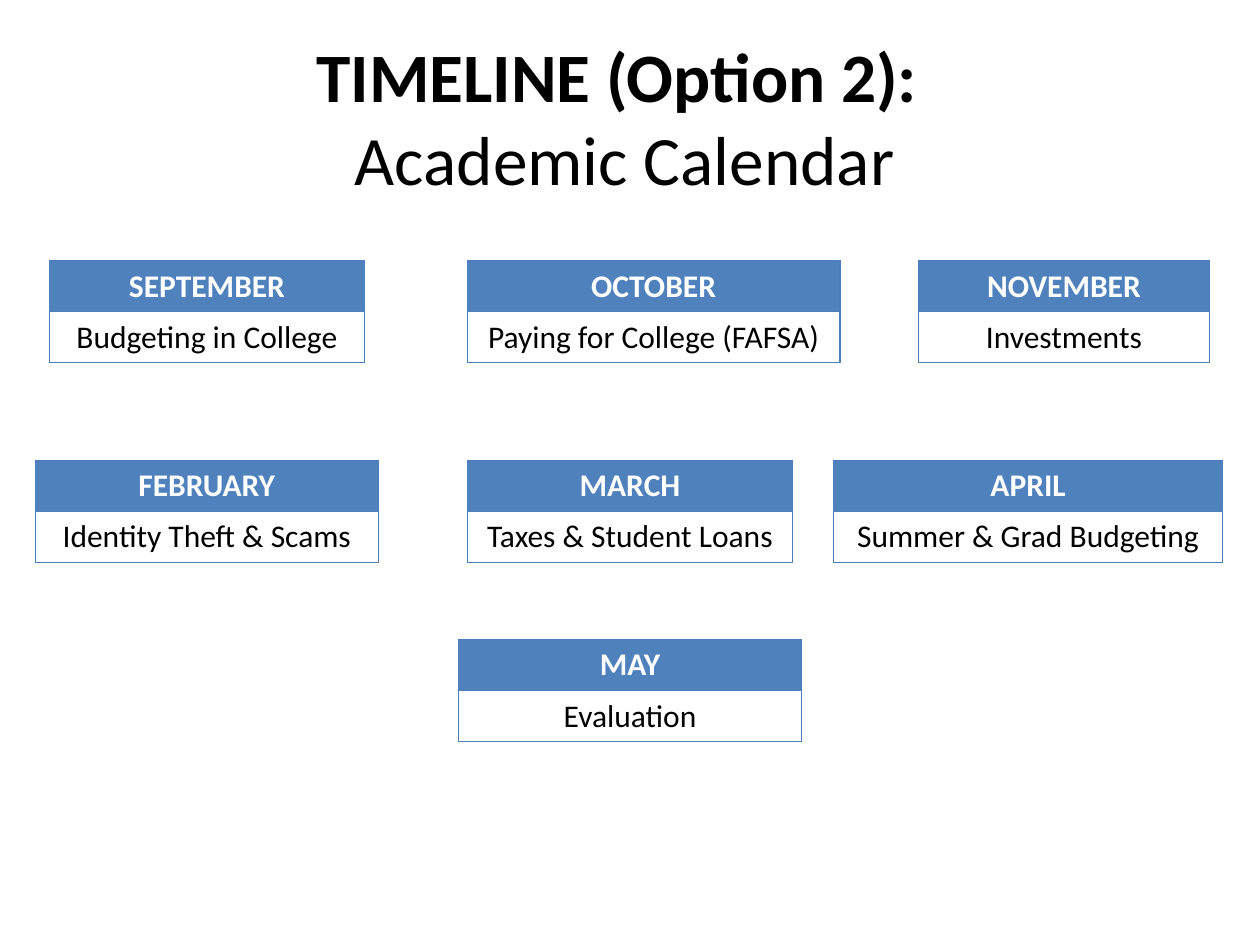
from dataclasses import dataclass

from lxml import etree
from pptx import Presentation
from pptx import util as u
from pptx.dml.color import RGBColor
from pptx.enum import text
from pptx.oxml.ns import qn
from pptx.slide import Slide
from pptx.table import _Cell


@dataclass(frozen=True)
class Theme:
    font: str = "Calibri"
    title_size: float = 39.6
    card_size: float = 18
    ink: str = "000000"
    paper: str = "FFFFFF"
    header: str = "4F81BD"
    border: str = "4B7EBC"
    border_width: float = 0.75
    row_height: float = 29.2


@dataclass(frozen=True)
class MonthCard:
    month: str
    topic: str
    left: float
    top: float
    width: float


THEME = Theme()
FALL, SPRING, CLOSE = 149, 263, 365.5  # tops of the three calendar rows
CARDS = [
    MonthCard("SEPTEMBER", "Budgeting in College", 28.3, FALL, 180),
    MonthCard("OCTOBER", "Paying for College (FAFSA)", 267, FALL, 213),
    MonthCard("NOVEMBER", "Investments", 525, FALL, 166),
    MonthCard("FEBRUARY", "Identity Theft & Scams", 20.2, SPRING, 196),
    MonthCard("MARCH", "Taxes & Student Loans", 267, SPRING, 186),
    MonthCard("APRIL", "Summer & Grad Budgeting", 476.5, SPRING, 222),
    MonthCard("MAY", "Evaluation", 262, CLOSE, 196),
]


def add_borders(cell: _Cell) -> None:
    """Outline all four sides; borders must come before the cell's fill."""
    properties = cell._tc.get_or_add_tcPr()
    for side in ("lnL", "lnR", "lnT", "lnB"):
        line = etree.SubElement(properties, qn(f"a:{side}"), w=str(u.Pt(THEME.border_width)))
        fill = etree.SubElement(line, qn("a:solidFill"))
        etree.SubElement(fill, qn("a:srgbClr"), val=THEME.border)


def format_cell(cell: _Cell, wording: str, fill: str, color: str, bold: bool) -> None:
    add_borders(cell)
    cell.fill.solid()
    cell.fill.fore_color.rgb = RGBColor.from_string(fill)
    cell.text = wording
    para = cell.text_frame.paragraphs[0]
    para.alignment = text.PP_ALIGN.CENTER
    para.font.name = THEME.font
    para.font.size = u.Pt(THEME.card_size)
    para.font.bold = bold
    para.font.color.rgb = RGBColor.from_string(color)


def add_card(page: Slide, card: MonthCard) -> None:
    frame = page.shapes.add_table(
        2, 1, u.Pt(card.left), u.Pt(card.top), u.Pt(card.width), u.Pt(2 * THEME.row_height)
    )
    table = frame.table
    format_cell(table.cell(0, 0), card.month, THEME.header, THEME.paper, True)
    format_cell(table.cell(1, 0), card.topic, THEME.paper, THEME.ink, False)


def add_title(page: Slide, heading: str, subheading: str) -> None:
    box = page.shapes.title
    box.left, box.top, box.width, box.height = u.Pt(18), u.Pt(21.6), u.Pt(678), u.Pt(90)
    frame = box.text_frame
    frame.auto_size = text.MSO_AUTO_SIZE.NONE
    frame.vertical_anchor = text.MSO_ANCHOR.MIDDLE
    para = frame.paragraphs[0]
    para.alignment = text.PP_ALIGN.CENTER
    para.font.name = THEME.font
    para.font.size = u.Pt(THEME.title_size)
    para.font.color.rgb = RGBColor.from_string(THEME.ink)
    span = para.add_run()
    span.text = heading
    span.font.bold = True
    # The break takes its line height from the title size
    para.add_line_break()
    span = para.add_run()
    span.text = subheading
    span.font.bold = False


def main() -> None:
    deck = Presentation()
    deck.slide_width, deck.slide_height = u.Pt(720), u.Pt(540)
    page = deck.slides.add_slide(deck.slide_layouts[5])

    # Title
    add_title(page, "TIMELINE (Option 2): ", "Academic Calendar")

    # Month cards
    for card in CARDS:
        add_card(page, card)

    deck.save("out.pptx")


if __name__ == "__main__":
    main()
